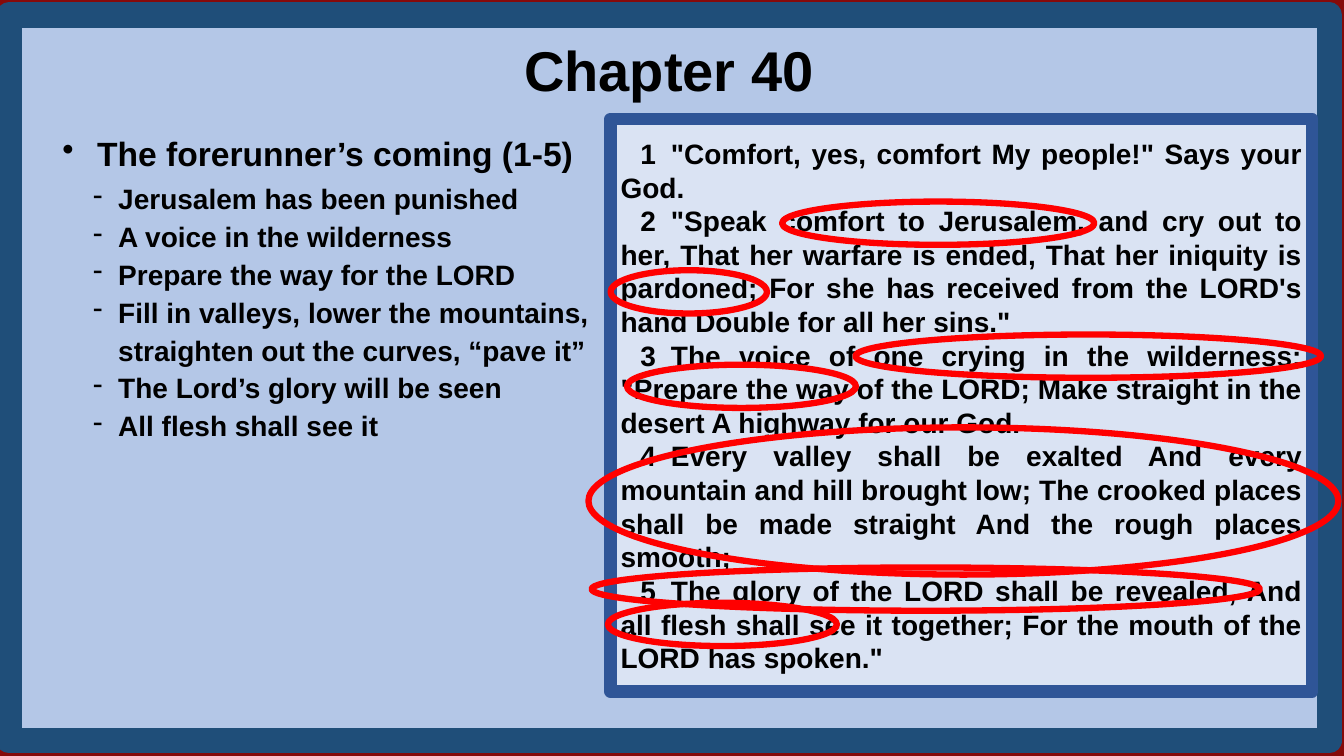
from lxml import etree
from pptx import Presentation
from pptx import util as u
from pptx.dml.color import RGBColor
from pptx.enum import shapes, text
from pptx.oxml.ns import qn

MAROON = RGBColor(0x86, 0x0A, 0x0A)
NAVY = RGBColor(0x1F, 0x4E, 0x79)
BLUE = RGBColor(0x2F, 0x55, 0x97)
SKY = RGBColor(0xB4, 0xC7, 0xE7)
PALE = RGBColor(0xDA, 0xE3, 0xF3)
RED = RGBColor(0xFF, 0x00, 0x00)
BLACK = RGBColor(0x00, 0x00, 0x00)

RING_HEIGHT = 1.09

VERSES = [
    '1\t"Comfort, yes, comfort My people!" Says your God.',
    '2\t"Speak comfort to Jerusalem, and cry out to her, That her warfare is ended, '
    "That her iniquity is pardoned; For she has received from the LORD's hand "
    'Double for all her sins."',
    '3\tThe voice of one crying in the wilderness: "Prepare the way of the LORD; '
    'Make straight in the desert A highway for our God.',
    '4\tEvery valley shall be exalted And every mountain and hill brought low; '
    'The crooked places shall be made straight And the rough places smooth;',
    '5\tThe glory of the LORD shall be revealed, And all flesh shall see it together; '
    'For the mouth of the LORD has spoken."',
]

POINTS = [
    ("-", "Jerusalem has been punished"),
    ("-", "A voice in the wilderness"),
    ("-", "Prepare the way for the LORD"),
    ("-", "Fill in valleys, lower the mountains,"),
    (None, "straighten out the curves, “pave it”"),
    ("-", "The Lord’s glory will be seen"),
    ("-", "All flesh shall see it"),
]

RINGS = [
    (19.71, 5.08, 7.87, RING_HEIGHT),
    (15.39, 6.81, 3.94, RING_HEIGHT),
    (21.56, 8.43, 11.73, RING_HEIGHT),
    (15.8, 9.19, 5.77, RING_HEIGHT),
    (14.83, 10.77, 18.9, 3.71),
    (14.91, 14.3, 16.84, RING_HEIGHT),
    (15.32, 15.19, 5.77, RING_HEIGHT),
]


class SlideBuilder:
    font = "Arial"
    body_size = 20

    def __init__(self, prs):
        self.s = prs.slides.add_slide(prs.slide_layouts[5])

    def background(self, color):
        fill = self.s.background.fill
        fill.solid()
        fill.fore_color.rgb = color

    def shape(self, kind, box, line, width, fill=None):
        sp = self.s.shapes.add_shape(kind, *map(u.Cm, box))
        sp.shadow.inherit = False
        if fill is None:
            sp.fill.background()
        else:
            sp.fill.solid()
            sp.fill.fore_color.rgb = fill
        sp.line.color.rgb = line
        sp.line.width = u.Pt(width)
        return sp

    def rect(self, box, line, width, fill):
        return self.shape(shapes.MSO_SHAPE.RECTANGLE, box, line, width, fill)

    def ring(self, box):
        return self.shape(shapes.MSO_SHAPE.OVAL, box, RED, 4.5)

    def textbox(self, box):
        tf = self.s.shapes.add_textbox(*map(u.Cm, box)).text_frame
        tf.word_wrap = True
        return tf

    def title(self, words, box):
        sp = self.s.shapes.title
        sp.element.getparent().append(sp.element)
        sp.left, sp.top, sp.width, sp.height = map(u.Cm, box)
        tf = sp.text_frame
        tf.auto_size = text.MSO_AUTO_SIZE.NONE
        tf.vertical_anchor = text.MSO_ANCHOR.TOP
        tf.text = words
        self.style(tf.paragraphs[0], 40, text.PP_ALIGN.CENTER)

    def style(self, p, size, align=text.PP_ALIGN.LEFT, after=0):
        p.alignment = align
        p.space_after = u.Pt(after)
        for r in p.runs:
            r.font.name = self.font
            r.font.size = u.Pt(size)
            r.font.bold = True
            r.font.color.rgb = BLACK

    def indent(self, p, margin, first, bullet=None, tab=None):
        pPr = p._p.get_or_add_pPr()
        pPr.set("marL", str(u.Cm(margin)))
        pPr.set("indent", str(u.Cm(first)))
        if bullet:
            etree.SubElement(pPr, qn("a:buChar"), char=bullet)
        if tab:
            tabs = etree.SubElement(pPr, qn("a:tabLst"))
            etree.SubElement(tabs, qn("a:tab"), pos=str(u.Cm(tab)), algn="l")

    def outline(self, box, heading, points):
        tf = self.textbox(box)
        p = tf.paragraphs[0]
        p.text = heading
        self.indent(p, 0.88, -0.88, "•")
        self.style(p, 24, after=6)
        for bullet, words in points:
            p = tf.add_paragraph()
            p.text = words
            self.indent(p, 1.41, -0.63 if bullet else 0, bullet)
            self.style(p, self.body_size, after=3)

    def passage(self, box, verses):
        tf = self.rect(box, BLUE, 9, PALE).text_frame
        tf.vertical_anchor = text.MSO_ANCHOR.MIDDLE
        tf.text = "\n".join(verses)
        for p in tf.paragraphs:
            self.indent(p, 0, 0.5, tab=1.4)
            self.style(p, self.body_size, text.PP_ALIGN.JUSTIFY)


def main():
    prs = Presentation()
    prs.slide_width, prs.slide_height = u.Cm(33.87), u.Cm(19.05)
    b = SlideBuilder(prs)
    b.background(MAROON)
    b.rect((0.23, 0.38, 33.27, 18.29), NAVY, 18, SKY)
    b.passage((15.39, 3, 17.68, 14.43), VERSES)
    b.outline((1.32, 3.23, 14.07, 8.13), "The forerunner’s coming (1-5)", POINTS)
    b.title("Chapter 40", (0.66, 0.76, 32.39, 1.96))
    for box in RINGS:
        b.ring(box)
    prs.save("out.pptx")


if __name__ == "__main__":
    main()
